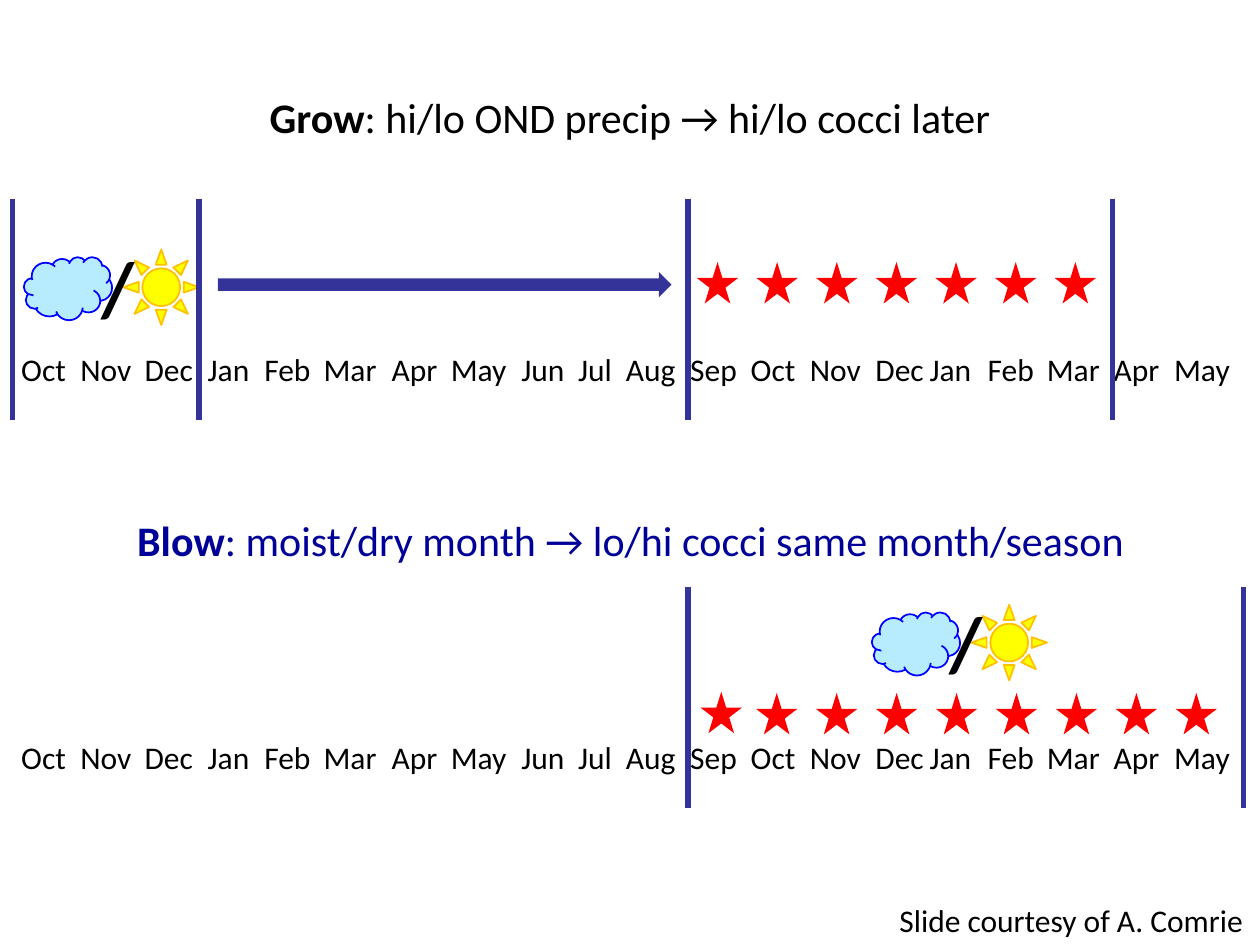
from lxml import etree
from pptx import Presentation
from pptx.dml.color import RGBColor
from pptx.enum.shapes import MSO_CONNECTOR, MSO_SHAPE
from pptx.enum.text import MSO_ANCHOR, PP_ALIGN
from pptx.oxml.ns import qn
from pptx.util import Inches, Pt

STRAIGHT = MSO_CONNECTOR.STRAIGHT
ARROW = MSO_SHAPE.RIGHT_ARROW
CLOUD = MSO_SHAPE.CLOUD
SUN = MSO_SHAPE.SUN
STAR = MSO_SHAPE.STAR_5_POINT
MIDDLE = MSO_ANCHOR.MIDDLE
CENTER = PP_ALIGN.CENTER

BLACK = RGBColor(0x00, 0x00, 0x00)
NAVY = RGBColor(0x00, 0x00, 0x99)
INDIGO = RGBColor(0x33, 0x33, 0x99)
RED = RGBColor(0xFF, 0x00, 0x00)
SKY = RGBColor(0xB7, 0xEC, 0xFF)
BLUE = RGBColor(0x00, 0x00, 0xFF)
YELLOW = RGBColor(0xFF, 0xFF, 0x00)
GOLD = RGBColor(0xFF, 0xC0, 0x00)

FONT = "Calibri"
MONTHS = ("Oct Nov Dec Jan Feb Mar Apr May Jun Jul "
          "Aug Sep Oct Nov Dec Jan Feb Mar Apr May").split()
MONTH_STOPS = [0.47, 0.98, 1.48, 1.93, 2.4, 2.94, 3.41, 3.97, 4.42, 4.8,
               5.31, 5.79, 6.26, 6.78, 7.21, 7.67, 8.14, 8.67, 9.15]
STAR_SIZE = 0.33
MARKER_HEIGHT = 1.75


def format_run(run, size, color, bold=False):
    run.font.name = FONT
    run.font.size = Pt(size)
    run.font.bold = bold
    run.font.color.rgb = color


def fill_heading(heading, term, finding, color):
    frame = heading.text_frame
    frame.word_wrap = True
    frame.vertical_anchor = MIDDLE
    paragraph = frame.paragraphs[0]
    paragraph.alignment = CENTER
    for text, bold in ((term, True), (finding, False)):
        run = paragraph.add_run()
        run.text = text
        format_run(run, 24, color, bold)


def add_label(slide, text, left, top, width, height, size=18, bold=False, wrap=False):
    label = slide.shapes.add_textbox(Inches(left), Inches(top), Inches(width), Inches(height))
    label.text_frame.word_wrap = wrap
    paragraph = label.text_frame.paragraphs[0]
    paragraph.text = text
    format_run(paragraph.runs[0], size, BLACK, bold)
    return paragraph


def add_months(slide, top):
    paragraph = add_label(slide, "\t".join(MONTHS), 0.07, top, 9.93, 0.4, wrap=True)
    stops = etree.SubElement(paragraph._p.get_or_add_pPr(), qn("a:tabLst"))
    for position in MONTH_STOPS:
        etree.SubElement(stops, qn("a:tab"), pos=str(Inches(position)), algn="l")


def add_symbol(slide, kind, left, top, width, height, fill, outline=None):
    symbol = slide.shapes.add_shape(kind, Inches(left), Inches(top), Inches(width), Inches(height))
    symbol.shadow.inherit = False
    symbol.fill.solid()
    symbol.fill.fore_color.rgb = fill
    if outline is None:
        symbol.line.fill.background()
    else:
        symbol.line.color.rgb = outline
        symbol.line.width = Pt(1)


def add_weather(slide, left, top):
    add_symbol(slide, CLOUD, left, top + 0.06, 0.7, 0.5, SKY, BLUE)
    add_symbol(slide, SUN, left + 0.79, top, 0.6, 0.6, YELLOW, GOLD)
    add_label(slide, "/", left + 0.52, top - 0.13, 0.47, 0.84, size=44, bold=True)


def add_star(slide, left, top):
    add_symbol(slide, STAR, left, top, STAR_SIZE, STAR_SIZE, RED)


def add_star_row(slide, first, last, count, top):
    pitch = (last - first) / (count - 1)
    for month in range(count):
        add_star(slide, first + month * pitch, top)


def add_markers(slide, positions, top):
    for x in positions:
        marker = slide.shapes.add_connector(
            STRAIGHT, Inches(x), Inches(top), Inches(x), Inches(top + MARKER_HEIGHT))
        marker.line.color.rgb = INDIGO
        marker.line.width = Pt(3)
        etree.SubElement(marker._element.spPr, qn("a:effectLst"))


def add_grow(slide):
    title = slide.shapes.title
    title.left, title.top = Inches(0.5), Inches(0.3)
    title.width, title.height = Inches(9), Inches(1.25)
    fill_heading(title, "Grow", ": hi/lo OND precip → hi/lo cocci later", BLACK)
    add_symbol(slide, ARROW, 1.73, 2.16, 3.6, 0.2, INDIGO)
    add_weather(slide, 0.19, 1.98)
    add_star_row(slide, 5.53, 8.37, 7, 2.08)
    add_months(slide, 2.73)
    add_markers(slide, (0.1, 1.58, 5.46, 8.83), 1.58)


def add_blow(slide):
    heading = slide.shapes.add_textbox(Inches(0.17), Inches(3.75), Inches(9.67), Inches(1.06))
    fill_heading(heading, "Blow", ": moist/dry month → lo/hi cocci same month/season", NAVY)
    add_weather(slide, 6.92, 4.8)
    add_star(slide, 5.56, 5.49)
    add_star_row(slide, 6, 9.33, 8, 5.5)
    add_months(slide, 5.81)
    add_markers(slide, (5.46, 9.87), 4.66)


def main():
    deck = Presentation()
    deck.slide_width, deck.slide_height = Inches(10), Inches(7.5)
    slide = deck.slides.add_slide(deck.slide_layouts[5])
    add_grow(slide)
    add_blow(slide)
    add_label(slide, "Slide courtesy of A. Comrie", 7.04, 7.1, 2.96, 0.4)
    deck.save("out.pptx")


if __name__ == "__main__":
    main()
